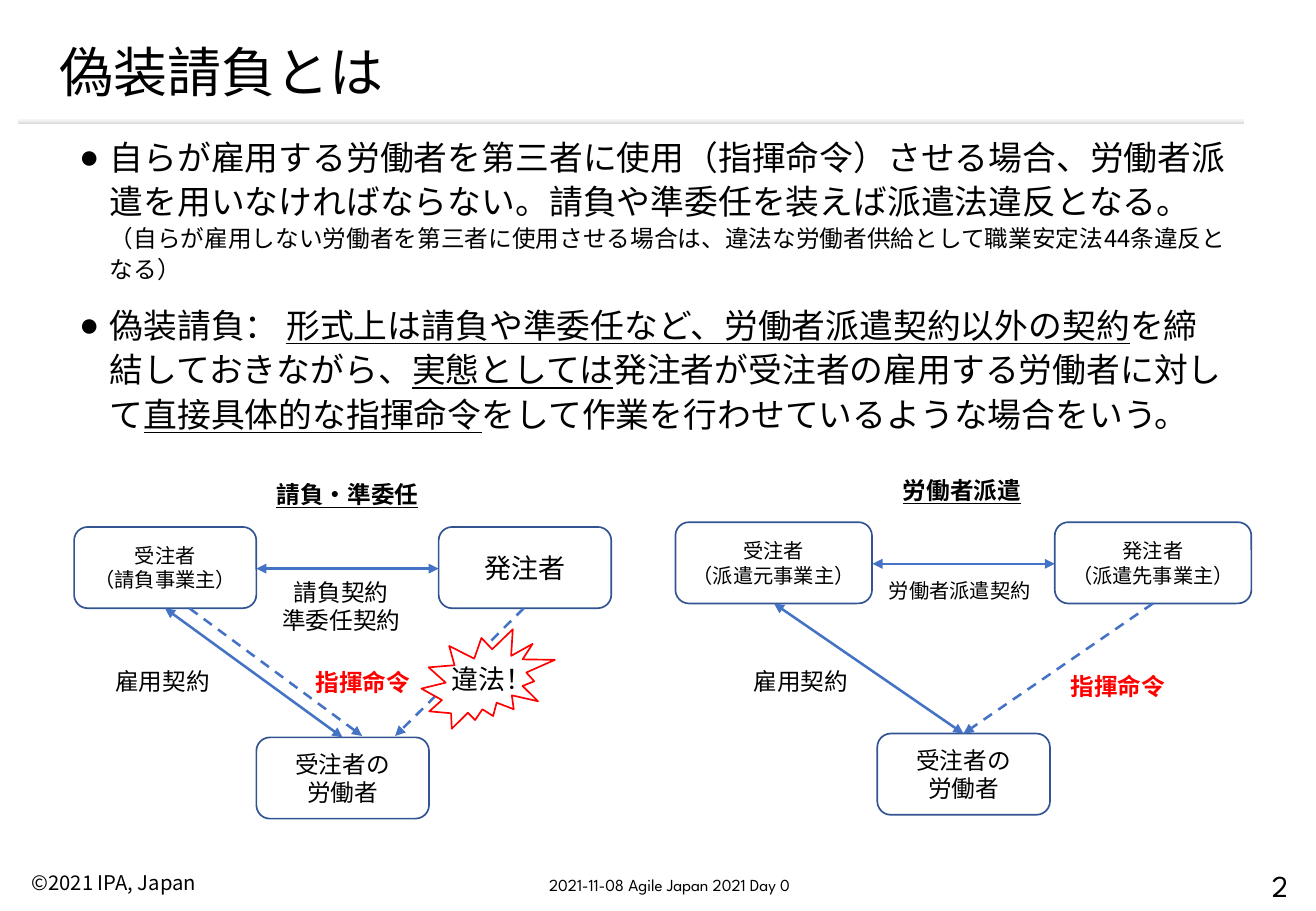
"""Build the slide that explains disguised contracting."""
import copy

import lxml.etree
import pptx
import pptx.dml.color
import pptx.enum.dml
import pptx.enum.shapes
import pptx.enum.text
import pptx.oxml.ns
import pptx.util

Cm = pptx.util.Cm
Pt = pptx.util.Pt
qn = pptx.oxml.ns.qn
RGBColor = pptx.dml.color.RGBColor
Align = pptx.enum.text.PP_ALIGN
Anchor = pptx.enum.text.MSO_ANCHOR
Shape = pptx.enum.shapes.MSO_SHAPE

BLACK = RGBColor(0x00, 0x00, 0x00)
WHITE = RGBColor(0xFF, 0xFF, 0xFF)
RED = RGBColor(0xFF, 0x00, 0x00)
NAVY = RGBColor(0x32, 0x54, 0x91)
BLUE = RGBColor(0x44, 0x72, 0xC4)
RULE_STOPS = ((0, RGBColor(0xD9, 0xD9, 0xD9)), (0.48, RGBColor(0xF2, 0xF2, 0xF2)), (1, WHITE))

JAPANESE = "Noto Sans CJK JP"
LABEL = "Arial"
ROUNDED = "League Spartan"


def write(paragraph, text, size=14, font=LABEL, color=BLACK, bold=False, underline=False):
    properties = None
    for line in text.split("\n"):
        if properties is not None:
            paragraph.add_line_break()
            paragraph._p[-1].append(copy.deepcopy(properties))
        if not line:
            continue
        run = paragraph.add_run()
        run.text = line
        run.font.size = Pt(size)
        run.font.bold = bold
        run.font.underline = underline
        run.font.color.rgb = color
        run.font.name = font
        properties = run._r.get_or_add_rPr()
        lxml.etree.SubElement(properties, qn("a:ea")).set("typeface", JAPANESE)


class SlideBuilder:
    def __init__(self, presentation):
        self.slide = presentation.slides.add_slide(presentation.slide_layouts[1])
        self.shapes = self.slide.shapes

    def place(self, shape, left, top, width, height):
        shape.left, shape.top, shape.width, shape.height = map(Cm, (left, top, width, height))
        shape.text_frame.auto_size = pptx.enum.text.MSO_AUTO_SIZE.NONE
        return shape.text_frame

    def title(self, text, *area):
        frame = self.place(self.shapes.title, *area)
        frame.vertical_anchor = Anchor.MIDDLE
        paragraph = frame.paragraphs[0]
        paragraph.alignment = Align.LEFT
        paragraph.line_spacing = 0.9
        write(paragraph, text, size=32, font=JAPANESE)

    def bullets(self, items, *area):
        frame = self.place(self.slide.placeholders[1], *area)
        frame.vertical_anchor = Anchor.TOP
        for index, item in enumerate(items):
            paragraph = frame.add_paragraph() if index else frame.paragraphs[0]
            properties = paragraph._p.get_or_add_pPr()
            properties.set("marL", str(Cm(0.64)))
            properties.set("indent", str(-Cm(0.64)))
            lxml.etree.SubElement(properties, qn("a:buChar")).set("char", "●")
            paragraph.line_spacing = 1.1
            paragraph.space_before = Pt(10 if index else 0)
            for text, style in item:
                write(paragraph, text, **{"size": 20, "font": JAPANESE, **style})

    def label(self, text, left, top, width, height=0.86, align=Align.CENTER,
              anchor=Anchor.TOP, wrap=True, **style):
        box = self.shapes.add_textbox(Cm(left), Cm(top), Cm(width), Cm(height))
        box.text_frame.word_wrap = wrap
        box.text_frame.vertical_anchor = anchor
        box.text_frame.paragraphs[0].alignment = align
        write(box.text_frame.paragraphs[0], text, **style)

    def shape(self, kind, left, top, width, height):
        shape = self.shapes.add_shape(kind, Cm(left), Cm(top), Cm(width), Cm(height))
        shape.shadow.inherit = False
        return shape

    def party(self, text, left, top, width, size):
        box = self.shape(Shape.ROUNDED_RECTANGLE, left, top, width, 1.7)
        box.fill.background()
        box.line.color.rgb = NAVY
        box.line.width = Pt(1)
        box.text_frame.vertical_anchor = Anchor.MIDDLE
        box.text_frame.paragraphs[0].alignment = Align.CENTER
        write(box.text_frame.paragraphs[0], text, size=size, font=ROUNDED)

    def burst(self, *area):
        burst = self.shape(Shape.EXPLOSION2, *area)
        burst.fill.solid()
        burst.fill.fore_color.rgb = WHITE
        burst.line.color.rgb = RED
        burst.line.width = Pt(1)

    def rule(self, *area):
        rule = self.shape(Shape.RECTANGLE, *area)
        rule.line.fill.background()
        rule.fill.gradient()
        rule.fill.gradient_angle = 90
        first = rule._element.spPr.find(".//" + qn("a:gs"))
        first.addnext(copy.deepcopy(first))
        for stop, (position, color) in zip(rule.fill.gradient_stops, RULE_STOPS):
            stop.position = position
            stop.color.rgb = color

    def arrow(self, start, end, command=False):
        arrow = self.shapes.add_connector(
            pptx.enum.shapes.MSO_CONNECTOR.STRAIGHT, *map(Cm, start + end))
        arrow.line.color.rgb = BLUE
        arrow.line.width = Pt(1.5)
        if command:
            arrow.line.dash_style = pptx.enum.dml.MSO_LINE.DASH
        for tag in ("a:tailEnd",) if command else ("a:headEnd", "a:tailEnd"):
            lxml.etree.SubElement(arrow.line._get_or_add_ln(), qn(tag)).set("type", "triangle")
        lxml.etree.SubElement(arrow._element.spPr, qn("a:effectLst"))


def main():
    presentation = pptx.Presentation()
    presentation.slide_width = Cm(27.51)
    presentation.slide_height = Cm(19.05)
    builder = SlideBuilder(presentation)

    builder.rule(0.38, 2.46, 25.63, 0.13)
    builder.title("偽装請負とは", 0.99, 0.71, 23.01, 1.7)
    underlined = {"underline": True}
    builder.bullets((
        (("自らが雇用する労働者を第三者に使用（指揮命令）させる場合、労働者派遣を用いなければならない。"
          "請負や準委任を装えば派遣法違反となる。\n", {}),
         ("（自らが雇用しない労働者を第三者に使用させる場合は、違法な労働者供給として"
          "職業安定法44条違反となる）", {"size": 14})),
        (("偽装請負： ", {}),
         ("形式上は請負や準委任など、労働者派遣契約以外の契約", underlined),
         ("を締結しておきながら、", {}),
         ("実態としては", underlined),
         ("発注者が受注者の雇用する労働者に対して", {}),
         ("直接具体的な指揮命令", underlined),
         ("をして作業を行わせているような場合をいう。", {})),
    ), 1.4, 2.64, 24.59, 16.08)

    for text, left, top, width, size in (
        ("受注者\n（請負事業主）", 1.55, 11.02, 3.81, 12),
        ("発注者", 9.17, 11.02, 3.61, 16),
        ("受注者の\n労働者", 5.36, 15.42, 3.61, 14),
        ("受注者\n（派遣元事業主）", 14.12, 10.92, 4.11, 12),
        ("発注者\n（派遣先事業主）", 22.05, 10.92, 4.11, 12),
        ("受注者の\n労働者", 18.34, 15.34, 3.61, 14),
    ):
        builder.party(text, left, top, width, size)

    for start, end, command in (
        ((5.36, 11.89), (9.17, 11.89), False),
        ((3.45, 12.72), (7.16, 15.42), False),
        ((3.96, 12.72), (7.57, 15.39), True),
        ((10.95, 12.72), (8.26, 15.39), True),
        ((18.24, 11.79), (22.05, 11.79), False),
        ((16.18, 12.62), (20.14, 15.34), False),
        ((24.1, 12.62), (20.14, 15.34), True),
    ):
        builder.arrow(start, end, command)

    builder.label("請負・準委任", 5.51, 9.91, 3.51, bold=True, underline=True)
    builder.label("労働者派遣", 18.21, 9.83, 3.81, bold=True, underline=True)
    builder.label("請負契約\n準委任契約", 5.38, 11.96, 3.51, 1.45)
    builder.label("労働者派遣契約", 18.16, 11.96, 3.81, 0.76, size=12)
    for left in (1.8, 15.14):
        builder.label("雇用契約", left, 13.82, 3.2)
    for left, top in ((5.99, 13.84), (21.77, 13.92)):
        builder.label("指揮命令", left, top, 3.2, color=RED, bold=True)
    builder.burst(8.81, 13.16, 2.79, 2.08)
    builder.label("違法！", 9.17, 13.72, 2.24, 0.94, size=16, font=JAPANESE)

    builder.label("©2021 IPA, Japan", 0.41, 18.08, 4.37, 0.76, align=Align.LEFT,
                  wrap=False, size=12, font=JAPANESE)
    builder.label("2021-11-08 Agile Japan 2021 Day 0", 8.99, 18.16, 10.01, 0.69,
                  anchor=Anchor.MIDDLE, size=10, font=ROUNDED)
    builder.label("2", 26.01, 18.01, 1.5, 0.99, anchor=Anchor.MIDDLE, size=18, font=ROUNDED)
    presentation.save("out.pptx")


if __name__ == "__main__":
    main()
